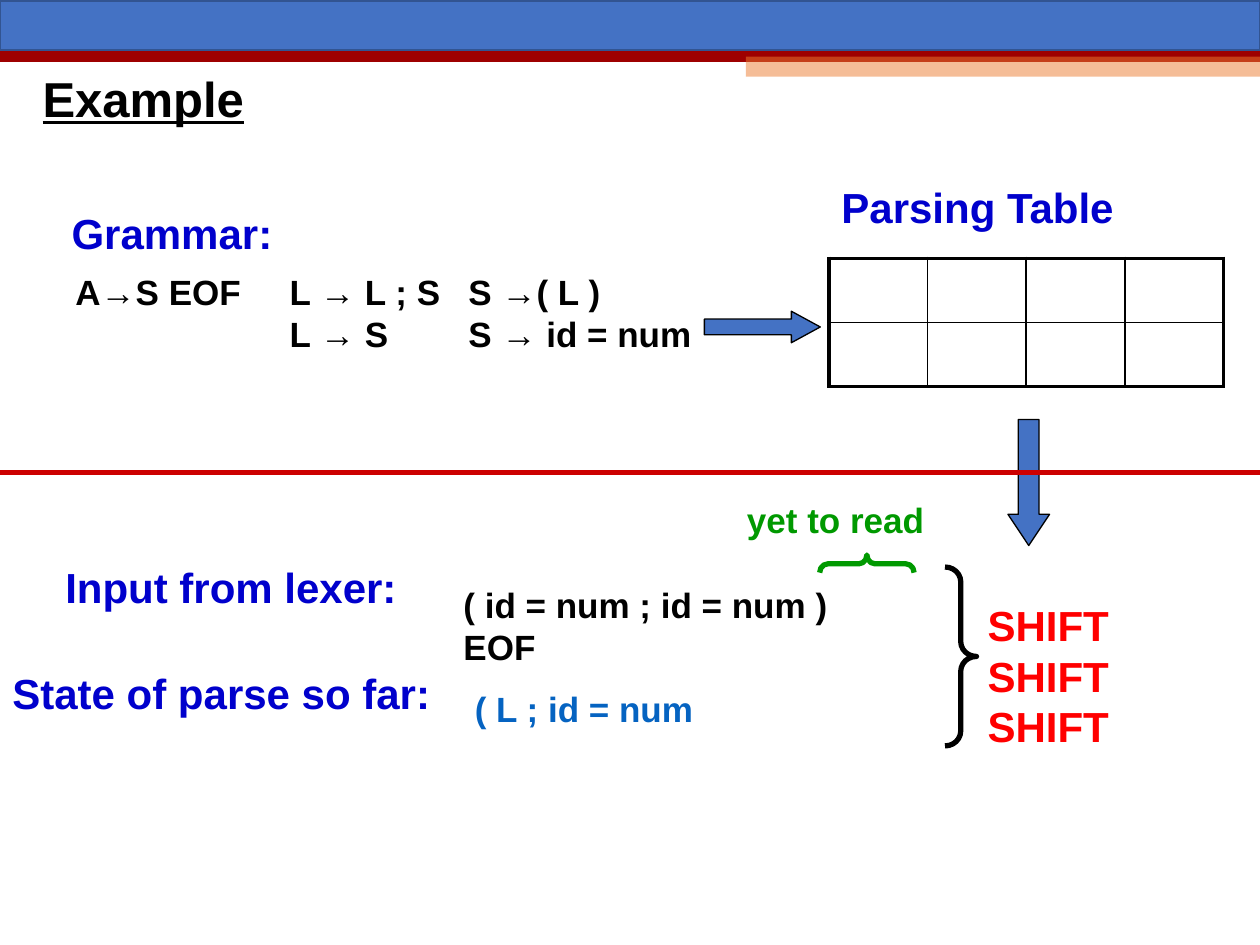
import pptx
import pptx.dml.color
import pptx.enum.shapes
import pptx.enum.text
import pptx.oxml
import pptx.oxml.ns
import pptx.util
from pptx.util import Inches

BLUE, BLACK, HEADING, GREEN = "4472C4", "000000", "0000CC", "009900"
SHAPE = pptx.enum.shapes.MSO_SHAPE
NS = pptx.oxml.ns.nsdecls("a")


def rgb(color):
    return pptx.dml.color.RGBColor.from_string(color)


def add_text(text, left, top, width, height, size=20, color=BLACK,
             wrap=False, underline=False, anchor="TOP", spacing=1.0):
    """Add a bold Arial text box with one paragraph per line of text."""
    tf = s.shapes.add_textbox(Inches(left), Inches(top), Inches(width), Inches(height)).text_frame
    tf.word_wrap = wrap
    tf.vertical_anchor = getattr(pptx.enum.text.MSO_ANCHOR, anchor)
    tf.text = text
    for p in tf.paragraphs:
        p.line_spacing = spacing
        for r in p.runs:
            r.font.name = "Arial"
            r.font.size = pptx.util.Pt(size)
            r.font.bold = True
            r.font.underline = underline
            r.font.color.rgb = rgb(color)


prs = pptx.Presentation()
prs.slide_width, prs.slide_height = Inches(10), Inches(7.5)
s = prs.slides.add_slide(prs.slide_layouts[6])

# Header band, arrows and braces; the full-width rules lie between them
shapes = [
    ("rule", 0.44, "9E0000", 7.5),
    (SHAPE.RECTANGLE, 5.92, 0.45, 4.08, 0.16, "ED7D31", None, 0, [], 0),
    (SHAPE.RECTANGLE, 0, 0.01, 10, 0.39, BLUE, "325491", 1, [], 0),
    (SHAPE.RIGHT_ARROW, 5.59, 2.47, 0.92, 0.25, BLUE, BLACK, 0.75, [0.5, 0.917], 0),
    (SHAPE.RIGHT_BRACE, 6.81, 4.1, 0.14, 0.75, None, GREEN, 3, [0.462, 0.5], 270),
    (SHAPE.RIGHT_BRACE, 7.5, 4.5, 0.25, 1.42, None, BLACK, 3, [0.472, 0.5], 0),
    (SHAPE.DOWN_ARROW, 8, 3.33, 0.33, 1, BLUE, BLACK, 0.75, [0.5, 0.75], 0),
    ("rule", 3.75, "CC0000", 3),
]
for kind, *rest in shapes:
    if kind == "rule":
        y, color, weight = rest
        sp = s.shapes.add_connector(pptx.enum.shapes.MSO_CONNECTOR.STRAIGHT,
                                    0, Inches(y), Inches(10), Inches(y))
        sp.line.color.rgb = rgb(color)
        sp.line.width = pptx.util.Pt(weight)
        sp.element.spPr.append(pptx.oxml.parse_xml(f"<a:effectLst {NS}/>"))
        continue
    left, top, width, height, fill, line, weight, adjustments, rotation = rest
    sp = s.shapes.add_shape(kind, Inches(left), Inches(top), Inches(width), Inches(height))
    sp.shadow.inherit = False
    sp.rotation = rotation
    for i, value in enumerate(adjustments):
        sp.adjustments[i] = value
    if fill:
        sp.fill.solid()
        sp.fill.fore_color.rgb = rgb(fill)
    else:
        sp.fill.background()
    if line:
        sp.line.color.rgb = rgb(line)
        sp.line.width = pptx.util.Pt(weight)
    else:
        sp.line.fill.background()
    if fill == "ED7D31":
        color = sp.element.spPr.find(".//" + pptx.oxml.ns.qn("a:srgbClr"))
        color.append(pptx.oxml.parse_xml(f'<a:alpha {NS} val="50000"/>'))

# Empty parsing table: thick frame, thin inner borders
rows, cols = 2, 4
table = s.shapes.add_table(rows, cols, Inches(6.58), Inches(2.05), Inches(3.13), Inches(1.02)).table
table.first_row = table.horz_banding = False
for row in range(rows):
    for col in range(cols):
        cell = table.cell(row, col)
        cell.fill.background()
        outer = {"L": col == 0, "R": col == cols - 1, "T": row == 0, "B": row == rows - 1}
        for i, (side, thick) in enumerate(outer.items()):
            width = pptx.util.Pt(2.25 if thick else 1)
            cell._tc.get_or_add_tcPr().insert(i, pptx.oxml.parse_xml(
                f'<a:ln{side} {NS} w="{width}"><a:solidFill><a:srgbClr val="{BLACK}"/>'
                f"</a:solidFill></a:ln{side}>"))

add_text("Example", 0.24, 0.45, 9, 0.71, size=28, wrap=True, underline=True,
         anchor="MIDDLE", spacing=0.9)

for text, left, top, width in [
    ("Grammar:", 0.47, 1.6, 1.8),
    ("Parsing Table", 6.58, 1.39, 2.39),
    ("Input from lexer:", 0.42, 4.41, 2.83),
    ("State of parse so far:", 0, 5.25, 3.52),
]:
    add_text(text, left, top, width, 0.5, size=24, color=HEADING)

for text, left, width in [
    ("A→S EOF", 0.5, 1.53),
    ("L → L ; S\nL → S", 2.2, 1.4),
    ("S →( L )\nS → id = num", 3.62, 2.03),
]:
    add_text(text, left, 2.1, width, 0.77)

add_text("( id = num ; id = num ) EOF", 3.58, 4.58, 3.5, 0.77, wrap=True)
add_text("( L ; id = num", 3.67, 5.41, 2.01, 0.43, color="0563C1")
add_text("yet to read", 5.83, 3.91, 1.75, 0.43, color=GREEN, wrap=True)
add_text("SHIFT\nSHIFT\nSHIFT", 7.74, 4.71, 1.17, 1.31, size=24, color="FF0000")

prs.save("out.pptx")
